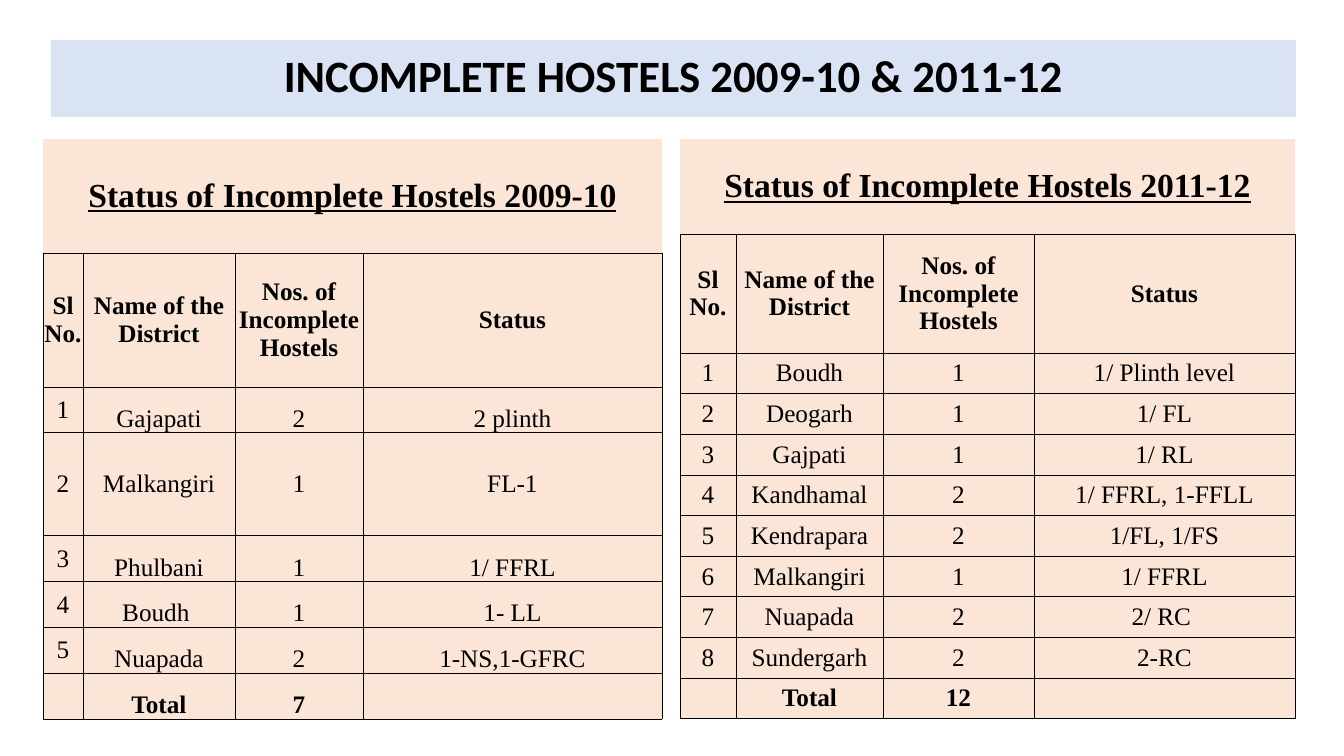
import pptx
import pptx.util
import pptx.dml.color
import pptx.enum.shapes
import pptx.enum.text
import pptx.oxml

ANCHOR = pptx.enum.text.MSO_ANCHOR
NS = "http://schemas.openxmlformats.org/drawingml/2006/main"
PLAIN = "{2D5ABB26-0587-4C30-8999-92F81FD0307C}"
HEADS = ["Sl No.", "Name of the District", "Nos. of Incomplete Hostels", "Status"]
EARLY = [
    ["1", "Gajapati", "2", "2 plinth"],
    ["2", "Malkangiri", "1", "FL-1"],
    ["3", "Phulbani", "1", "1/ FFRL"],
    ["4", "Boudh ", "1", "1- LL"],
    ["5", "Nuapada", "2", "1-NS,1-GFRC"],
    ["", "Total", "7", ""],
]
LATE = [
    ["1", "Boudh", "1", "1/ Plinth level"],
    ["2", "Deogarh", "1", "1/ FL"],
    ["3", "Gajpati", "1", "1/ RL"],
    ["4", "Kandhamal", "2", "1/ FFRL, 1-FFLL"],
    ["5", "Kendrapara", "2", "1/FL, 1/FS"],
    ["6", "Malkangiri", "1", "1/ FFRL"],
    ["7", "Nuapada", "2", "2/ RC "],
    ["8", "Sundergarh", "2", "2-RC"],
    ["", "Total", "12", ""],
]


def px(n):
    return pptx.util.Emu(round(n * 914400 / 100.8))


def paint(fill, code):
    fill.solid()
    fill.fore_color.rgb = color(code)


def color(code):
    return pptx.dml.color.RGBColor.from_string(code)


def write(frame, text, size=18, font="Times New Roman", bold=False, under=False, space=None):
    para = frame.paragraphs[0]
    para.alignment = pptx.enum.text.PP_ALIGN.CENTER
    para.line_spacing = space
    run = para.add_run()
    run.text = text
    run.font.size = pptx.util.Pt(size)
    run.font.name = font
    run.font.bold = bold
    run.font.underline = under
    run.font.color.rgb = color("000000")


def border(cell, sides):
    props = cell._tc.get_or_add_tcPr()
    for side in sides:
        props.append(pptx.oxml.parse_xml(
            f'<a:ln{side} xmlns:a="{NS}" w="6350"><a:solidFill>'
            f'<a:srgbClr val="000000"/></a:solidFill></a:ln{side}>'))


def style(cell, sides, anchor):
    border(cell, sides)
    paint(cell.fill, "FBE5D6")
    cell.margin_left = cell.margin_right = cell.margin_top = cell.margin_bottom = 0
    cell.vertical_anchor = anchor


def banner(slide, text):
    box = slide.shapes.add_shape(
        pptx.enum.shapes.MSO_SHAPE.RECTANGLE, px(51), px(40), px(1245), px(77))
    box.shadow.inherit = False
    box.line.fill.background()
    paint(box.fill, "DAE3F3")
    frame = box.text_frame
    frame.word_wrap = True
    frame.vertical_anchor = ANCHOR.MIDDLE
    write(frame, text, size=32, font="Calibri", bold=True, space=0.9)


def grid(slide, left, title, data, cols, tall, low=False):
    rows = [[title, "", "", ""], HEADS] + data
    high = 580
    share = (high - sum(tall.values())) / (len(rows) - len(tall))
    table = slide.shapes.add_table(
        len(rows), len(cols), px(left), px(139), px(sum(cols)), px(high)).table
    table.first_row = table.horz_banding = False
    table._tbl.tblPr.find(f"{{{NS}}}tableStyleId").text = PLAIN
    for col, wide in zip(table.columns, cols):
        col.width = px(wide)
    for r, row in enumerate(rows):
        table.rows[r].height = px(tall.get(r, share))
        for c, text in enumerate(row):
            cell = table.cell(r, c)
            sink = low and c > 0 and r not in tall
            style(cell, "LRTB" if r else "B", ANCHOR.BOTTOM if sink else ANCHOR.MIDDLE)
            if text:
                write(cell.text_frame, text, size=18 if r else 24,
                      bold=r < 2 or r == len(rows) - 1, under=r == 0)
    table.cell(0, 0).merge(table.cell(0, len(cols) - 1))


def main():
    deck = pptx.Presentation()
    deck.slide_width, deck.slide_height = px(1344), px(756)
    slide = deck.slides.add_slide(deck.slide_layouts[6])
    banner(slide, "INCOMPLETE HOSTELS 2009-10 & 2011-12")
    grid(slide, 43, "Status of Incomplete Hostels 2009-10", EARLY,
         [40, 152, 128, 299], {0: 114, 1: 134, 3: 103}, low=True)
    grid(slide, 680, "Status of Incomplete Hostels 2011-12", LATE,
         [56, 147, 151, 261], {0: 95, 1: 119})
    deck.save("out.pptx")


if __name__ == "__main__":
    main()
